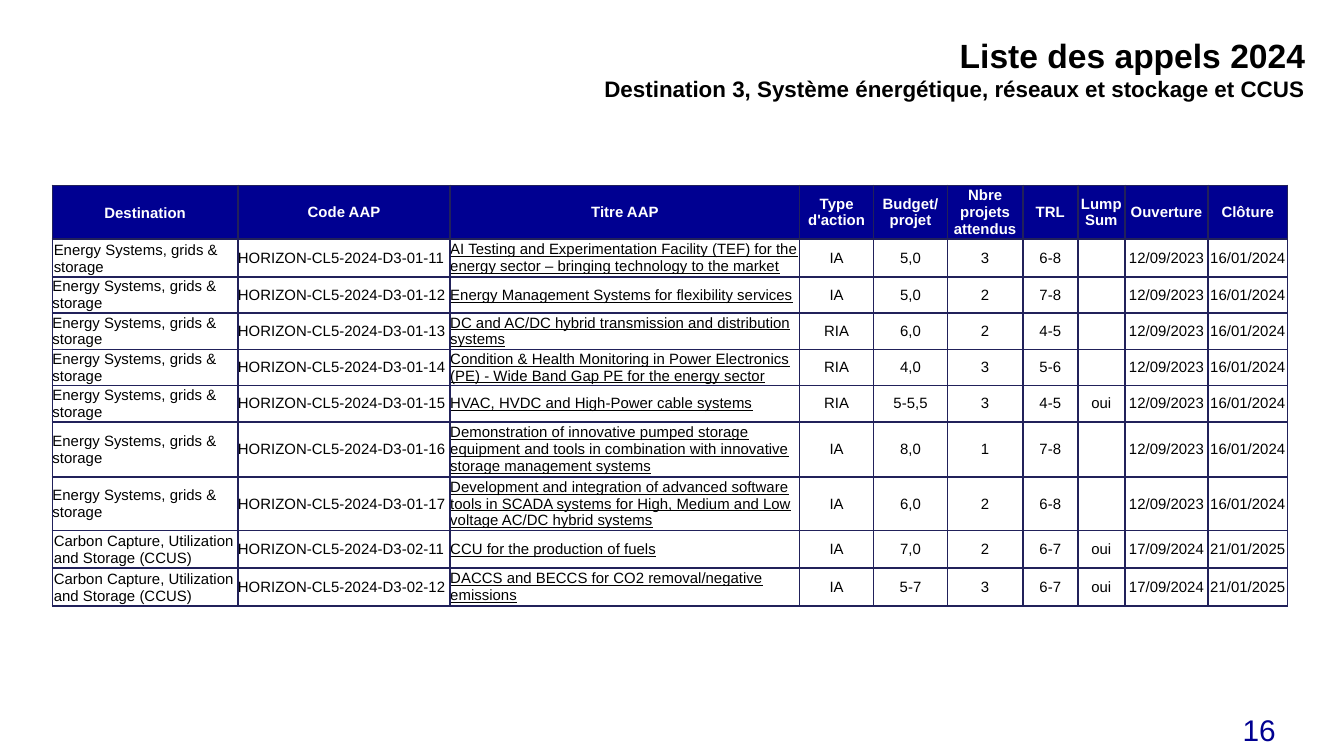
from dataclasses import dataclass

import pptx
import pptx.dml.color
import pptx.enum.text
import pptx.oxml
import pptx.oxml.ns
import pptx.util
from pptx.util import Inches

COLORS = {"navy": "000091", "border": "21215A", "black": "000000", "white": "FFFFFF"}
FONT = "Arial"
ALIGN = pptx.enum.text.PP_ALIGN
MIDDLE = pptx.enum.text.MSO_ANCHOR.MIDDLE
TOP = pptx.enum.text.MSO_ANCHOR.TOP

ENERGY = "Energy Systems, grids & storage"
CCUS = "Carbon Capture, Utilization and Storage (CCUS)"
DATES = {ENERGY: ("12/09/2023", "16/01/2024"), CCUS: ("17/09/2024", "21/01/2025")}


@dataclass(frozen=True)
class Style:
    size: float
    color: str = "black"
    bold: bool = False
    underline: bool = False


@dataclass(frozen=True)
class Column:
    heading: str
    width: float
    align: ALIGN = ALIGN.CENTER
    underline: bool = False


@dataclass(frozen=True)
class Call:
    destination: str
    number: str
    title: str
    action: str
    budget: str
    projects: str
    trl: str
    lump_sum: str
    height: float

    def values(self) -> tuple[str, ...]:
        code = f"HORIZON-CL5-2024-D3-{self.number}"
        return (self.destination, code, self.title, self.action, self.budget,
                self.projects, self.trl, self.lump_sum, *DATES[self.destination])


COLUMNS = [
    Column("Destination", 1.38, ALIGN.LEFT),
    Column("Code AAP", 1.58, ALIGN.LEFT),
    Column("Titre AAP", 2.6, ALIGN.LEFT, underline=True),
    Column("Type d'action", 0.55),
    Column("Budget/ projet", 0.55),
    Column("Nbre projets attendus", 0.56),
    Column("TRL", 0.41),
    Column("Lump Sum", 0.35),
    Column("Ouverture", 0.62),
    Column("Clôture", 0.59),
]

CALLS = [
    Call(ENERGY, "01-11", "AI Testing and Experimentation Facility (TEF) for the energy sector "
         "– bringing technology to the market", "IA", "5,0", "3", "6-8", "", 0.28),
    Call(ENERGY, "01-12", "Energy Management Systems for flexibility services",
         "IA", "5,0", "2", "7-8", "", 0.27),
    Call(ENERGY, "01-13", "DC and AC/DC hybrid transmission and distribution systems",
         "RIA", "6,0", "2", "4-5", "", 0.27),
    Call(ENERGY, "01-14", "Condition & Health Monitoring in Power Electronics (PE) "
         "- Wide Band Gap PE for the energy sector", "RIA", "4,0", "3", "5-6", "", 0.27),
    Call(ENERGY, "01-15", "HVAC, HVDC and High-Power cable systems",
         "RIA", "5-5,5", "3", "4-5", "oui", 0.27),
    Call(ENERGY, "01-16", "Demonstration of innovative pumped storage equipment and tools "
         "in combination with innovative storage management systems",
         "IA", "8,0", "1", "7-8", "", 0.41),
    Call(ENERGY, "01-17", "Development and integration of advanced software tools in SCADA "
         "systems for High, Medium and Low voltage AC/DC hybrid systems",
         "IA", "6,0", "2", "6-8", "", 0.4),
    Call(CCUS, "02-11", "CCU for the production of fuels",
         "IA", "7,0", "2", "6-7", "oui", 0.28),
    Call(CCUS, "02-12", "DACCS and BECCS for CO2 removal/negative emissions",
         "IA", "5-7", "3", "6-7", "oui", 0.28),
]
HEADER_HEIGHT = 0.4


def rgb(name: str) -> pptx.dml.color.RGBColor:
    return pptx.dml.color.RGBColor.from_string(COLORS[name])


def add_run(paragraph, text: str, style: Style) -> None:
    run = paragraph.add_run()
    run.text = text
    run.font.name = FONT
    run.font.size = pptx.util.Pt(style.size)
    run.font.bold = style.bold
    run.font.underline = style.underline
    run.font.color.rgb = rgb(style.color)


def add_text(slide, box: tuple[float, ...], lines: list[tuple[str, Style]], anchor) -> None:
    """Add a right-aligned text box, one paragraph per line."""
    frame = slide.shapes.add_textbox(*map(Inches, box)).text_frame
    frame.word_wrap = True
    frame.vertical_anchor = anchor
    for index, (text, style) in enumerate(lines):
        paragraph = frame.paragraphs[0] if index == 0 else frame.add_paragraph()
        paragraph.alignment = ALIGN.RIGHT
        add_run(paragraph, text, style)


def add_borders(cell) -> None:
    properties = cell._tc.get_or_add_tcPr()
    for side in ("lnL", "lnR", "lnT", "lnB"):
        properties.append(pptx.oxml.parse_xml(
            f'<a:{side} {pptx.oxml.ns.nsdecls("a")} w="12700"><a:solidFill>'
            f'<a:srgbClr val="{COLORS["border"]}"/></a:solidFill></a:{side}>'))


def fill_cell(cell, text: str, style: Style, align, inset: float, fill: str | None) -> None:
    cell.margin_left = cell.margin_right = cell.margin_top = Inches(inset)
    cell.margin_bottom = 0
    cell.vertical_anchor = MIDDLE
    add_borders(cell)
    if fill:
        cell.fill.solid()
        cell.fill.fore_color.rgb = rgb(fill)
    else:
        cell.fill.background()
    paragraph = cell.text_frame.paragraphs[0]
    paragraph.alignment = align
    if text:
        add_run(paragraph, text, style)
    else:
        # Keeps an empty cell from stretching its row
        paragraph._p.append(pptx.oxml.parse_xml(
            f'<a:endParaRPr {pptx.oxml.ns.nsdecls("a")} sz="{int(style.size * 100)}"/>'))


def add_calls_table(slide) -> None:
    heights = [HEADER_HEIGHT] + [call.height for call in CALLS]
    width = sum(column.width for column in COLUMNS)
    table = slide.shapes.add_table(
        len(heights), len(COLUMNS), Inches(0.39), Inches(1.38),
        Inches(width), Inches(sum(heights))).table
    table.first_row = table.horz_banding = False
    for row, height in zip(table.rows, heights):
        row.height = Inches(height)

    for c, column in enumerate(COLUMNS):
        table.columns[c].width = Inches(column.width)
        first_inset = 0.01 if c == 0 else 0
        fill_cell(table.cell(0, c), column.heading, Style(8, "white", bold=True),
                  ALIGN.CENTER, first_inset, "navy")
        for r, call in enumerate(CALLS, start=1):
            inset = first_inset if r == 1 or call.destination == CCUS else 0
            fill_cell(table.cell(r, c), call.values()[c],
                      Style(8, underline=column.underline), column.align, inset, None)


def main() -> None:
    deck = pptx.Presentation()
    # Widescreen, 16:9
    deck.slide_width = Inches(10)
    deck.slide_height = Inches(10 * 9 / 16)
    slide = deck.slides.add_slide(deck.slide_layouts[6])

    # Page number
    add_text(slide, (8.31, 5.23, 1.28, 0.39), [("16", Style(16, "navy"))], MIDDLE)
    # Title and subtitle
    add_text(slide, (3.5, 0.21, 6.31, 0.81), [
        ("Liste des appels 2024", Style(18, bold=True)),
        ("Destination 3, Système énergétique, réseaux et stockage et CCUS",
         Style(12, bold=True)),
    ], TOP)
    # List of calls
    add_calls_table(slide)

    deck.save("out.pptx")


if __name__ == "__main__":
    main()
